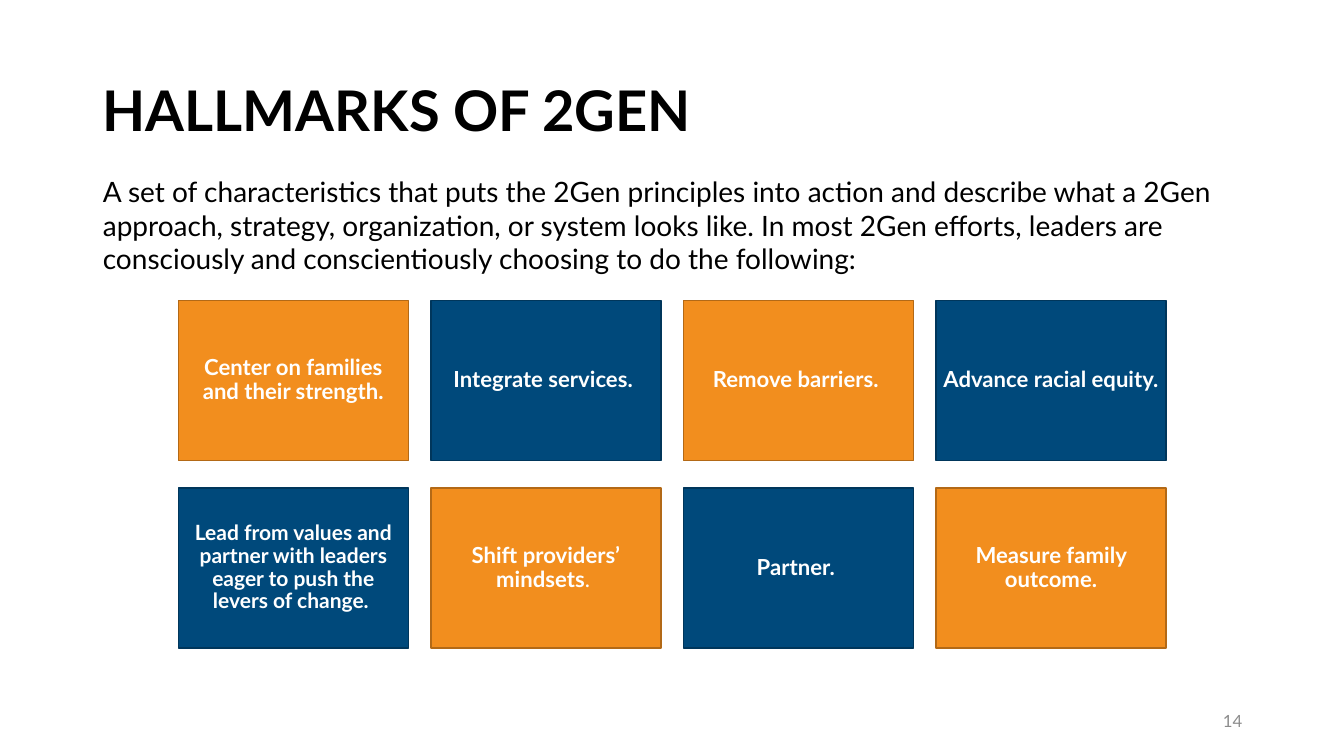
from lxml import etree
from pptx import Presentation
from pptx.dml.color import RGBColor
from pptx.enum import shapes, text
from pptx.oxml import ns
from pptx.util import Inches, Pt

FONT = "Lato"
ORANGE = ("F28E1E", "B36916")
BLUE = ("00497B", "00365B")
INTRO = (
    "A set of characteristics that puts the 2Gen principles into action and "
    "describe what a 2Gen approach, strategy, organization, or system looks "
    "like. In most 2Gen efforts, leaders are consciously and conscientiously "
    "choosing to do the following:"
)
HALLMARKS = [
    [
        [("Center on families and their strength.", True)],
        [("Integrate services. ", True)],
        [("Remove barriers. ", True)],
        [("Advance racial equity. ", True)],
    ],
    [
        [("Lead from values and partner with leaders eager to push the levers of change. ", True)],
        [("Shift providers’ mindsets", True), (". ", False)],
        [("Partner. ", True)],
        [("Measure family outcome.", True)],
    ],
]


def colour(code):
    """Turn a hex string into a colour."""
    return RGBColor.from_string(code)


def place(shape, left, top, width, height):
    """Move and size a shape, in inches."""
    shape.left, shape.top = Inches(left), Inches(top)
    shape.width, shape.height = Inches(width), Inches(height)


def write(shape, spans, size, code, align, anchor, spacing=1.0):
    """Fill a shape with one paragraph of (words, bold) spans."""
    frame = shape.text_frame
    frame.word_wrap = True
    frame.auto_size = text.MSO_AUTO_SIZE.NONE
    frame.vertical_anchor = anchor
    para = frame.paragraphs[0]
    para.alignment = align
    para.line_spacing = spacing
    para.space_before = Pt(0)
    for words, bold in spans:
        span = para.add_run()
        span.text = words
        span.font.name = FONT
        span.font.size = Pt(size)
        span.font.bold = bold
        span.font.color.rgb = colour(code)
    return para


def remove_bullet(para):
    """Set a list paragraph flush left without a bullet."""
    props = para._p.get_or_add_pPr()
    props.set("marL", "0")
    props.set("indent", "0")
    etree.SubElement(props, ns.qn("a:buNone"))


def add_card(group, left, top, spans, size, inset, colours):
    """Add one hallmark rectangle to the group."""
    card = group.shapes.add_shape(
        shapes.MSO_SHAPE.RECTANGLE,
        Inches(left), Inches(top), Inches(2.28), Inches(1.59),
    )
    fill, line = colours
    card.shadow.inherit = False
    card.fill.solid()
    card.fill.fore_color.rgb = colour(fill)
    card.line.color.rgb = colour(line)
    card.line.width = Pt(1)
    frame = card.text_frame
    frame.margin_left = frame.margin_right = Inches(inset)
    frame.margin_top = frame.margin_bottom = Inches(inset)
    write(card, spans, size, "FFFFFF", text.PP_ALIGN.CENTER, text.MSO_ANCHOR.MIDDLE, 0.9)


def add_hallmarks(page):
    """Lay the hallmarks out as a checkerboard of cards."""
    group = page.shapes.add_group_shape()
    for row, cards in enumerate(HALLMARKS):
        for column, spans in enumerate(cards):
            is_long = len(spans[0][0]) > 60
            size, inset = (15, 0.06) if is_long else (15.8, 0.07)
            colours = BLUE if (row + column) % 2 else ORANGE
            add_card(group, 1.77 + 2.505 * column, 2.98 + 1.86 * row,
                     spans, size, inset, colours)


def main():
    """Build the slide and save it."""
    deck = Presentation()
    deck.slide_width, deck.slide_height = Inches(13.33), Inches(7.5)
    page = deck.slides.add_slide(deck.slide_layouts[1])
    left, middle = text.PP_ALIGN.LEFT, text.MSO_ANCHOR.MIDDLE

    title = page.shapes.title
    place(title, 0.92, 0.4, 11.5, 1.45)
    write(title, [("HALLMARKS OF 2GEN", True)], 40, "000000", left, middle, 0.9)

    body = page.placeholders[1]
    place(body, 0.92, 1.68, 11.5, 4.76)
    para = write(body, [(INTRO, False)], 20, "000000", left, text.MSO_ANCHOR.TOP)
    remove_bullet(para)

    number = page.shapes.add_textbox(Inches(9.42), Inches(6.95), Inches(3), Inches(0.4))
    write(number, [("14", False)], 12, "8C8C8C", text.PP_ALIGN.RIGHT, middle)

    add_hallmarks(page)
    deck.save("out.pptx")


if __name__ == "__main__":
    main()
